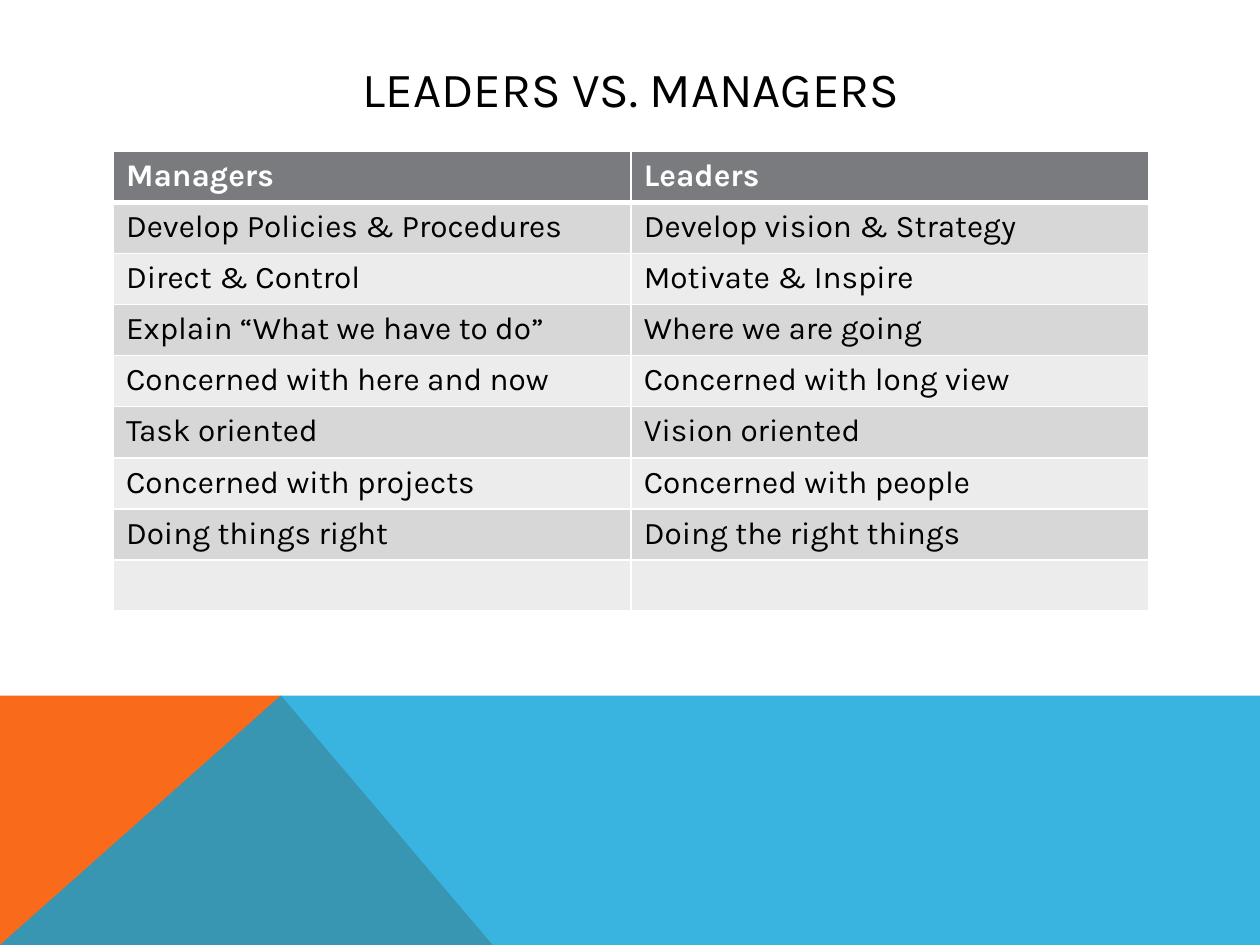
import pptx
import pptx.dml.color
import pptx.enum.text
import pptx.oxml.ns
import pptx.util
from lxml import etree
from pptx.util import Inches

THEME = {
    "font": "Karla",
    "title_size": 28,
    "table_size": 18,
    "text": "000000",
    "light": "FFFFFF",
    "header": "797B7E",
    "bands": ("D7D7D8", "ECECEC"),
    "orange": "F96A1B",
    "blue": "08A1D9",
    "blue_alpha": 80,
    "border": 1,
    "header_border": 3,
}
ROWS = [
    ("Managers", "Leaders"),
    ("Develop Policies & Procedures", "Develop vision & Strategy"),
    ("Direct & Control", "Motivate & Inspire"),
    ("Explain “What we have to do”", "Where we are going"),
    ("Concerned with here and now", "Concerned with long view"),
    ("Task oriented", "Vision oriented"),
    ("Concerned with projects", "Concerned with people"),
    ("Doing things right", "Doing the right things"),
    ("", ""),
]
BAND_TOP, PEAK = 5.52, 2.23
FOOTER = [
    ([(0, 7.5), (0, BAND_TOP), (PEAK, BAND_TOP), (3.91, 7.5)], THEME["orange"], 100),
    ([(0, 7.5), (PEAK, BAND_TOP), (10, BAND_TOP), (10, 7.5)], THEME["blue"], THEME["blue_alpha"]),
]


def add_text(para, text, size, color, bold=False):
    span = para.add_run()
    span.text = text
    values = {"name": THEME["font"], "size": pptx.util.Pt(size), "bold": bold}
    for name, value in values.items():
        setattr(span.font, name, value)
    span.font.color.rgb = pptx.dml.color.RGBColor.from_string(color)


def add_border(cell, side, width):
    """Draw one cell edge; side is L, R, T or B."""
    qn = pptx.oxml.ns.qn
    line = etree.SubElement(cell._tc.get_or_add_tcPr(), qn(f"a:ln{side}"), w=str(pptx.util.Pt(width)))
    fill = etree.SubElement(line, qn("a:solidFill"))
    etree.SubElement(fill, qn("a:srgbClr"), val=THEME["light"])


deck = pptx.Presentation()
deck.slide_width, deck.slide_height = Inches(10), Inches(7.5)
page = deck.slides.add_slide(deck.slide_layouts[6])

# Footer triangles
for points, color, alpha in FOOTER:
    corners = [(Inches(x), Inches(y)) for x, y in points]
    builder = page.shapes.build_freeform(*corners[0])
    builder.add_line_segments(corners[1:], close=True)
    shape = builder.convert_to_shape()
    shape.shadow.inherit = False
    shape.line.fill.background()
    shape.fill.solid()
    shape.fill.fore_color.rgb = pptx.dml.color.RGBColor.from_string(color)
    if alpha < 100:
        tint = shape._element.spPr.find(".//" + pptx.oxml.ns.qn("a:srgbClr"))
        etree.SubElement(tint, pptx.oxml.ns.qn("a:alpha"), val=str(alpha * 1000))

# Title
box = page.shapes.add_textbox(Inches(0.9), Inches(0.4), Inches(8.22), Inches(0.6))
frame = box.text_frame
frame.word_wrap = True
frame.vertical_anchor = pptx.enum.text.MSO_ANCHOR.MIDDLE
frame.paragraphs[0].alignment = pptx.enum.text.PP_ALIGN.CENTER
add_text(frame.paragraphs[0], "LEADERS VS. MANAGERS", THEME["title_size"], THEME["text"])

# Comparison table
table = page.shapes.add_table(
    len(ROWS), len(ROWS[0]), Inches(0.9), Inches(1.2), Inches(8.22), Inches(3.65)
).table
for row_index, row in enumerate(ROWS):
    is_header = row_index == 0
    fill_color = THEME["header"] if is_header else THEME["bands"][(row_index - 1) % 2]
    widths = {side: THEME["border"] for side in "LRTB"}
    if row_index < 2:
        widths["B" if is_header else "T"] = THEME["header_border"]
    for column_index, text in enumerate(row):
        cell = table.cell(row_index, column_index)
        for side, width in widths.items():
            add_border(cell, side, width)
        cell.fill.solid()
        cell.fill.fore_color.rgb = pptx.dml.color.RGBColor.from_string(fill_color)
        if text:
            text_color = THEME["light"] if is_header else THEME["text"]
            add_text(cell.text_frame.paragraphs[0], text, THEME["table_size"], text_color, is_header)

deck.save("out.pptx")
